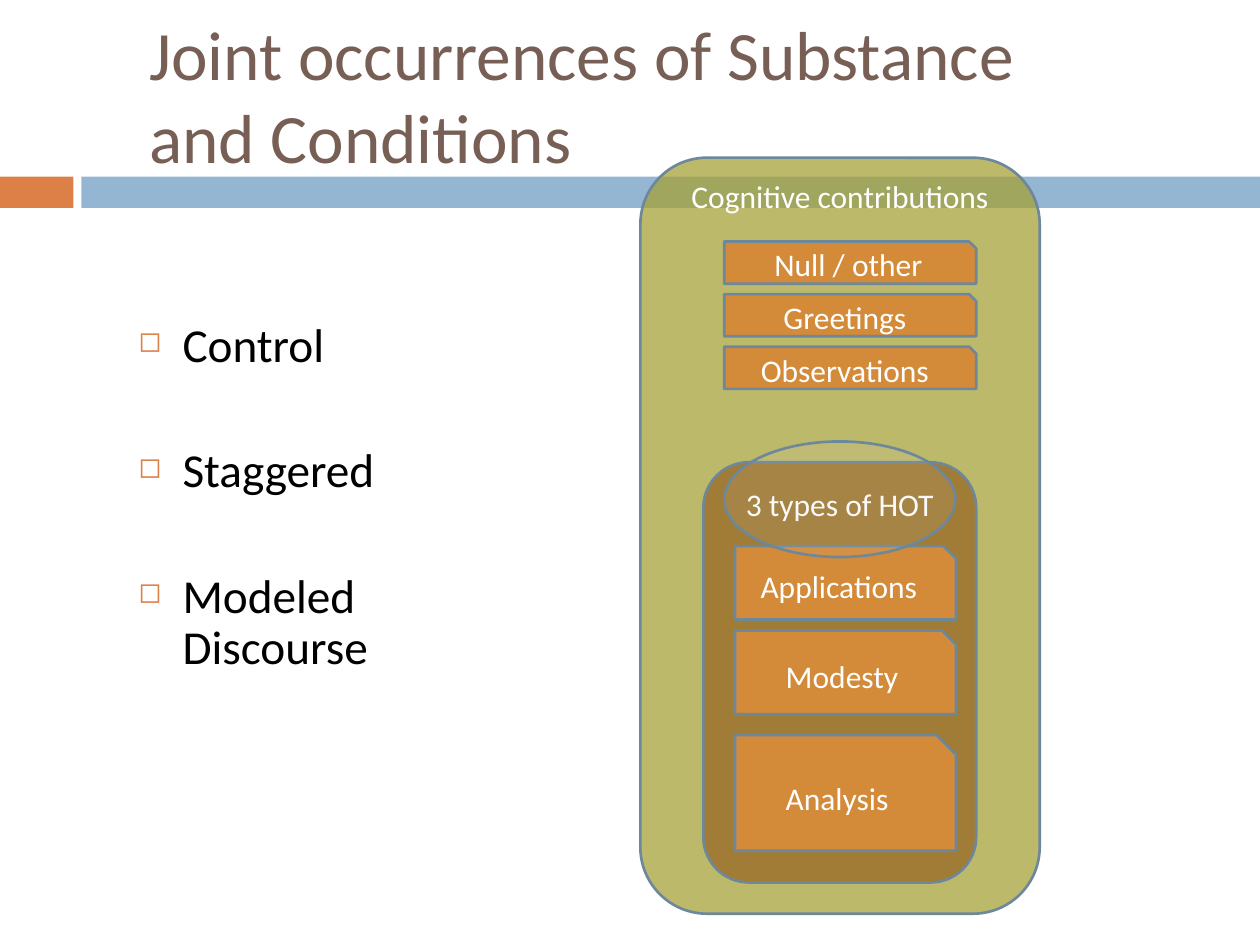
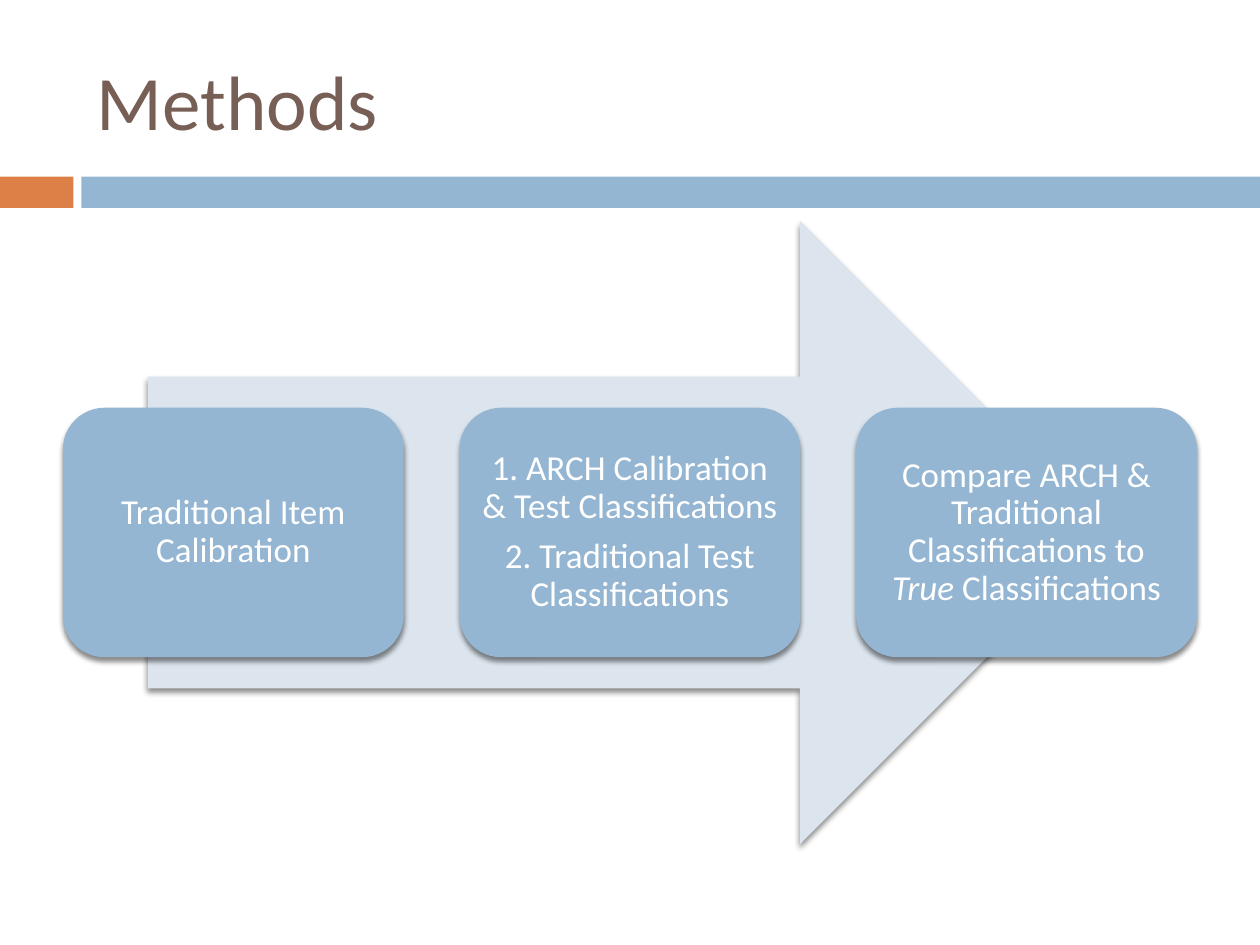
import dataclasses

import lxml.etree
import pptx
import pptx.dml.color
import pptx.enum.shapes
import pptx.enum.text
import pptx.oxml.ns
import pptx.util

Cm = pptx.util.Cm
Pt = pptx.util.Pt
qn = pptx.oxml.ns.qn
SHAPE = pptx.enum.shapes.MSO_SHAPE
ALIGN = pptx.enum.text.PP_ALIGN
ANCHOR = pptx.enum.text.MSO_ANCHOR


@dataclasses.dataclass(frozen=True)
class Theme:
    font: str = "Calibri"
    title: str = "775F55"
    orange: str = "DD8047"
    blue: str = "94B6D2"
    pale_blue: str = "DCE5EE"
    outline: str = "6D879B"
    olive: str = "A6A138"
    brown: str = "A17C36"
    amber: str = "D38A39"
    grey: str = "D5D1D1"
    white: str = "FFFFFF"
    black: str = "000000"
    title_size: float = 44
    long_title_size: float = 39.6
    bullet_size: float = 27
    card_size: float = 20
    label_size: float = 18
    outline_width: float = 1.5


THEME = Theme()


@dataclasses.dataclass(frozen=True)
class Box:
    left: float
    top: float
    width: float
    height: float

    def inner(self, left, top, width, height):
        return Box(self.left + left, self.top + top, width, height)

    def lengths(self):
        return [Cm(value) for value in dataclasses.astuple(self)]


def color(code):
    return pptx.dml.color.RGBColor.from_string(code)


def set_values(target, values):
    for name, value in values.items():
        setattr(target, name, value)


def add_xml(parent, tag, **attributes):
    return lxml.etree.SubElement(parent, qn(tag), attributes)


def write(frame, paragraphs, size, ink, frame_format=None, para_format=None):
    set_values(frame, {"word_wrap": True, "auto_size": pptx.enum.text.MSO_AUTO_SIZE.NONE,
                       **(frame_format or {})})
    for index, pieces in enumerate(paragraphs):
        para = frame.add_paragraph() if index else frame.paragraphs[0]
        set_values(para, para_format or {})
        for text, italic in [(pieces, None)] if isinstance(pieces, str) else pieces:
            span = para.add_run()
            span.text = text
            set_values(span.font, {"name": THEME.font, "size": Pt(size), "italic": italic})
            span.font.color.rgb = color(ink)


def add_figure(page, kind, box, fill, outlined=False, opacity=100, shadow=False):
    figure = page.shapes.add_shape(kind, *box.lengths())
    figure.shadow.inherit = False
    figure.fill.solid()
    figure.fill.fore_color.rgb = color(fill)
    properties = figure.element.spPr
    if opacity < 100:
        tint = properties.find(qn("a:solidFill")).find(qn("a:srgbClr"))
        add_xml(tint, "a:alpha", val=str(opacity * 1000))
    if outlined:
        figure.line.color.rgb = color(THEME.outline)
        figure.line.width = Pt(THEME.outline_width)
    else:
        figure.line.fill.background()
    if shadow:
        cast = add_xml(properties.find(qn("a:effectLst")), "a:outerShdw",
                       blurRad=str(Pt(3)), dist=str(Pt(2.4)), dir="5400000", rotWithShape="0")
        add_xml(add_xml(cast, "a:srgbClr", val=THEME.black), "a:alpha", val="45000")
    return figure


def add_label(figure, text, frame_format=None):
    write(figure.text_frame, [text], THEME.label_size, THEME.white,
          {"vertical_anchor": ANCHOR.MIDDLE, **(frame_format or {})},
          {"alignment": ALIGN.CENTER})


def add_chip(page, box, text):
    add_label(add_figure(page, SHAPE.SNIP_1_RECTANGLE, box, THEME.amber, outlined=True), text)


def add_page(deck, title, box, size):
    page = deck.slides.add_slide(deck.slide_layouts[5])
    holder = page.shapes.title
    set_values(holder, dict(zip(("left", "top", "width", "height"), box.lengths())))
    write(holder.text_frame, [title], size, THEME.title,
          {"vertical_anchor": ANCHOR.MIDDLE}, {"alignment": ALIGN.LEFT})
    return page


def move_bands_to_layout(page):
    for left, width, fill in ((0, 1.48, THEME.orange), (1.64, 23.76, THEME.blue)):
        band = add_figure(page, SHAPE.RECTANGLE, Box(left, 3.56, width, 0.63), fill)
        page.slide_layout.shapes.element.append(band.element)


def add_conditions(page, box, conditions):
    frame = page.shapes.add_textbox(*box.lengths()).text_frame
    write(frame, conditions, THEME.bullet_size, THEME.black,
          para_format={"line_spacing": 0.9, "space_after": Pt(42.6)})
    for para in frame.paragraphs:
        properties = para._p.get_or_add_pPr()
        set_indent = {"marL": Cm(0.89), "indent": -Cm(0.89)}
        for name, value in set_indent.items():
            properties.set(name, str(value))
        add_xml(add_xml(properties, "a:buClr"), "a:srgbClr", val=THEME.orange)
        add_xml(properties, "a:buSzPct", val="60000")
        add_xml(properties, "a:buChar", char="◻")


def add_thinking_types(page, box):
    panel = add_figure(page, SHAPE.ROUNDED_RECTANGLE, box, THEME.brown, outlined=True)
    add_label(panel, "3 types of HOT", {"vertical_anchor": ANCHOR.TOP, "margin_top": Cm(0.19)})
    for text, top, height in (("Applications ", 1.69, 1.48), ("Modesty", 3.39, 1.69),
                              ("Analysis ", 5.5, 2.33)):
        add_chip(page, box.inner(0.64, top, 4.45, height), text)
    add_figure(page, SHAPE.OVAL, box.inner(0.42, -0.42, 4.66, 2.33), THEME.grey,
               outlined=True, opacity=10)


def add_contributions(page, box):
    panel = add_figure(page, SHAPE.ROUNDED_RECTANGLE, box, THEME.olive, outlined=True, opacity=74)
    add_label(panel, "Cognitive contributions", {"vertical_anchor": ANCHOR.TOP, "margin_top": 0})
    add_thinking_types(page, box.inner(1.27, 6.14, 5.5, 8.47))
    for index, text in enumerate(("Null / other", "Greetings ", "Observations ")):
        add_chip(page, box.inner(1.69, 1.69 + index * 1.06, 5.08, 0.85), text)


def add_process(page, box, steps):
    add_figure(page, SHAPE.RIGHT_ARROW, box.inner(1.71, 0, 19.43, box.height),
               THEME.pale_blue, shadow=True)
    card_width, card_height = 6.87, 5.03
    pitch = (box.width - card_width) / (len(steps) - 1)
    margins = dict.fromkeys(("margin_left", "margin_top", "margin_right", "margin_bottom"), Cm(0.2))
    for index, paragraphs in enumerate(steps):
        place = box.inner(index * pitch, (box.height - card_height) / 2, card_width, card_height)
        card = add_figure(page, SHAPE.ROUNDED_RECTANGLE, place, THEME.blue, shadow=True)
        write(card.text_frame, paragraphs, THEME.card_size, THEME.white,
              {"vertical_anchor": ANCHOR.MIDDLE, **margins},
              {"alignment": ALIGN.CENTER, "line_spacing": 0.9, "space_after": Pt(7)})


def build_occurrences(deck):
    page = add_page(deck, "Joint occurrences of Substance and Conditions",
                    Box(2.75, 1.06, 20.1, 1.69), THEME.long_title_size)
    move_bands_to_layout(page)
    add_contributions(page, Box(12.91, 3.18, 8.05, 15.24))
    add_conditions(page, Box(2.54, 6.35, 7.62, 7.72),
                   ["Control", "Staggered", "Modeled Discourse"])


def build_methods(deck):
    page = add_page(deck, "Methods", Box(1.7, 0.64, 22.65, 2.75), THEME.title_size)
    add_process(page, Box(1.27, 4.45, 22.86, 12.57), [
        ["Traditional Item Calibration"],
        ["1. ARCH Calibration & Test Classifications", "2. Traditional Test Classifications"],
        [[("Compare ARCH & Traditional Classifications to ", None), ("True", True),
          (" Classifications", None)]],
    ])


def main():
    deck = pptx.Presentation()
    set_values(deck, {"slide_width": Cm(25.4), "slide_height": Cm(19.05)})
    build_occurrences(deck)
    build_methods(deck)
    deck.save("out.pptx")


if __name__ == "__main__":
    main()
